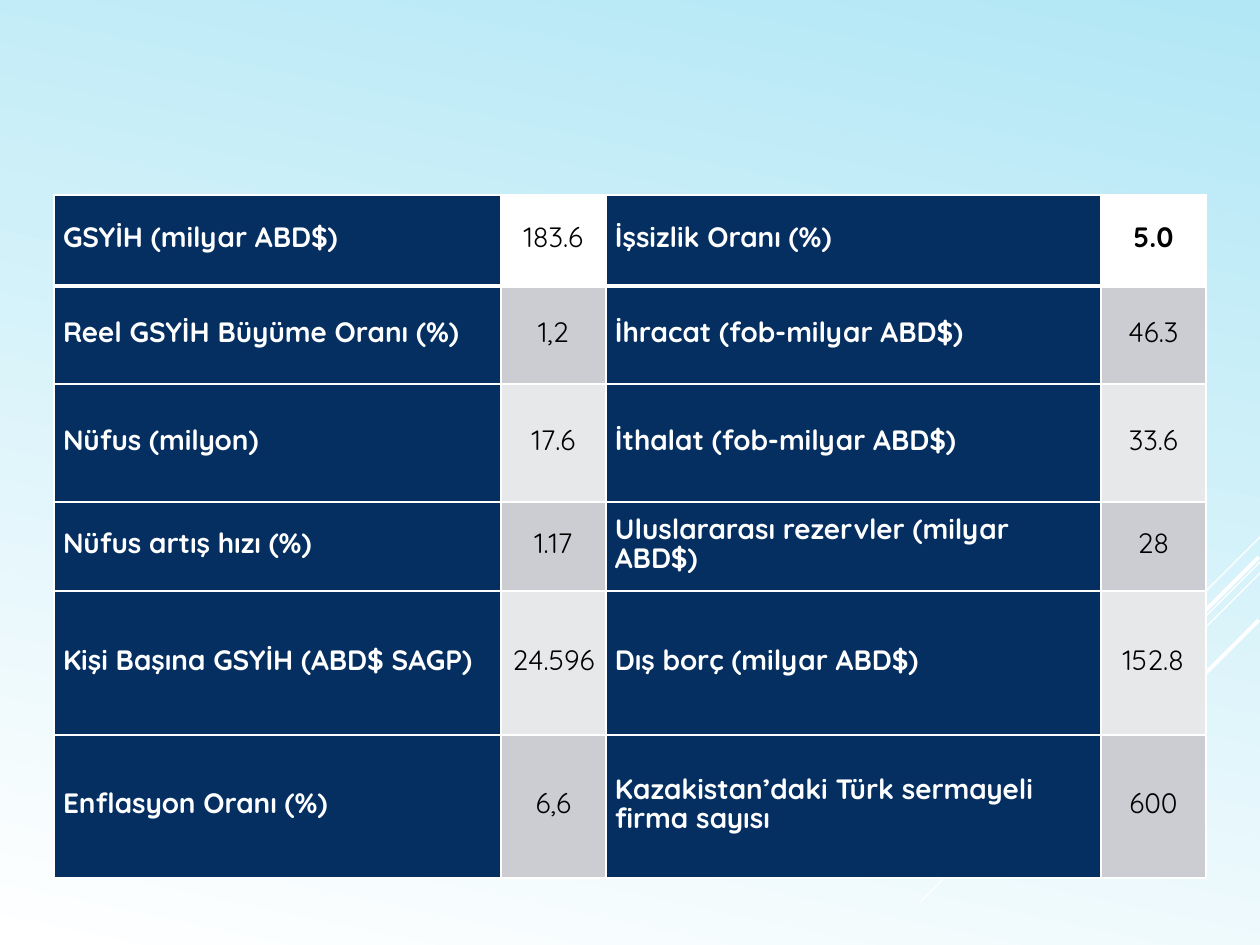
"""Build a slide with a table of Kazakhstan's main economic indicators."""
import dataclasses

import lxml.etree
import pptx
import pptx.dml.color
import pptx.enum.shapes
import pptx.enum.text
import pptx.oxml.ns
import pptx.util

INDICATORS = [
    ("GSYİH (milyar ABD$)", "183.6", "İşsizlik Oranı (%)", "5.0"),
    ("Reel GSYİH Büyüme Oranı (%)", "1,2", "İhracat (fob-milyar ABD$)", "46.3"),
    ("Nüfus (milyon)", "17.6", "İthalat (fob-milyar ABD$)", "33.6"),
    ("Nüfus artış hızı (%)", "1.17", "Uluslararası rezervler (milyar ABD$)", "28"),
    ("Kişi Başına GSYİH (ABD$ SAGP)", "24.596", "Dış borç (milyar ABD$)", "152.8"),
    ("Enflasyon Oranı (%)", "6,6", "Kazakistan’daki Türk sermayeli firma sayısı", "600"),
]
BOLD_VALUES = {"5.0"}
TABLE_LEFT, TABLE_TOP = 54, 195
COLUMN_WIDTHS = (447, 105, 495, 105)
ROW_HEIGHTS = (91, 98, 118, 89, 144, 143)
CELL_MARGIN = 9
DIAGONALS = [
    (1260, 537, 104, 0.75),
    (1260, 562, 340, 0.75),
    (1260, 573, 217, 0.75),
    (1259, 557, 198, 2.25),
    (1259, 620, 144, 2.25),
]


@dataclasses.dataclass(frozen=True)
class Theme:
    sky: str = "B2E7F5"
    white: str = "FFFFFF"
    navy: str = "052F61"
    black: str = "000000"
    dark_band: str = "CCCDD2"
    light_band: str = "E7E8EA"
    font: str = "Quicksand"
    text_size: float = 16
    line_spacing: float = 16.5
    value_space_after: float = 7.5
    border: float = 1
    header_border: float = 3


THEME = Theme()


def px(count):
    return pptx.util.Emu(count * 914400 // 126)


def rgb(color):
    return pptx.dml.color.RGBColor.from_string(color)


def write_text(text_frame, text, *, color, bold, align, space_after):
    paragraph = text_frame.paragraphs[0]
    paragraph.alignment = align
    paragraph.line_spacing = pptx.util.Pt(THEME.line_spacing)
    paragraph.space_after = pptx.util.Pt(space_after)
    run = paragraph.add_run()
    run.text = text
    run.font.name = THEME.font
    run.font.size = pptx.util.Pt(THEME.text_size)
    run.font.bold = bold
    run.font.color.rgb = rgb(color)


def add_borders(cell, widths):
    properties = cell._tc.get_or_add_tcPr()
    for side, width in widths.items():
        line = lxml.etree.SubElement(properties, pptx.oxml.ns.qn(f"a:ln{side}"), w=str(pptx.util.Pt(width)))
        fill = lxml.etree.SubElement(line, pptx.oxml.ns.qn("a:solidFill"))
        lxml.etree.SubElement(fill, pptx.oxml.ns.qn("a:srgbClr"), val=THEME.white)


def paint_background(slide):
    fill = slide.background.fill
    fill.gradient()
    fill.gradient_angle = 360 - 102
    for stop, color in zip(fill.gradient_stops, (THEME.sky, THEME.white)):
        stop.color.rgb = rgb(color)


def add_diagonal(slide, right, top, reach, width):
    connector = slide.shapes.add_connector(
        pptx.enum.shapes.MSO_CONNECTOR.STRAIGHT, px(right), px(top), px(right - reach), px(top + reach)
    )
    connector.line.color.rgb = rgb(THEME.white)
    connector.line.width = pptx.util.Pt(width)
    lxml.etree.SubElement(connector._element.spPr, pptx.oxml.ns.qn("a:effectLst"))


def fill_cell(cell, text, row, is_label):
    borders = dict.fromkeys("LRTB", THEME.border)
    if row == 0:
        borders["B"] = THEME.header_border
    elif row == 1:
        borders["T"] = THEME.header_border
    add_borders(cell, borders)
    band = THEME.white if row == 0 else (THEME.light_band, THEME.dark_band)[row % 2]
    cell.fill.solid()
    cell.fill.fore_color.rgb = rgb(THEME.navy if is_label else band)
    cell.margin_left = cell.margin_right = px(CELL_MARGIN)
    cell.margin_top = cell.margin_bottom = 0
    cell.vertical_anchor = pptx.enum.text.MSO_ANCHOR.MIDDLE
    alignment = pptx.enum.text.PP_ALIGN
    write_text(
        cell.text_frame,
        text,
        color=THEME.white if is_label else THEME.black,
        bold=is_label or text in BOLD_VALUES,
        align=alignment.LEFT if is_label else alignment.CENTER,
        space_after=0 if is_label else THEME.value_space_after,
    )


def add_indicator_table(slide):
    table = slide.shapes.add_table(
        len(ROW_HEIGHTS), len(COLUMN_WIDTHS), px(TABLE_LEFT), px(TABLE_TOP),
        px(sum(COLUMN_WIDTHS)), px(sum(ROW_HEIGHTS)),
    ).table
    table.horz_banding = False
    for column, width in zip(table.columns, COLUMN_WIDTHS):
        column.width = px(width)
    for row, (height, texts) in enumerate(zip(ROW_HEIGHTS, INDICATORS)):
        table.rows[row].height = px(height)
        for column, text in enumerate(texts):
            fill_cell(table.cell(row, column), text, row, column % 2 == 0)


def main():
    presentation = pptx.Presentation()
    presentation.slide_width, presentation.slide_height = px(1260), px(945)
    slide = presentation.slides.add_slide(presentation.slide_layouts[6])
    paint_background(slide)
    for diagonal in DIAGONALS:
        add_diagonal(slide, *diagonal)
    add_indicator_table(slide)
    presentation.save("out.pptx")


if __name__ == "__main__":
    main()
